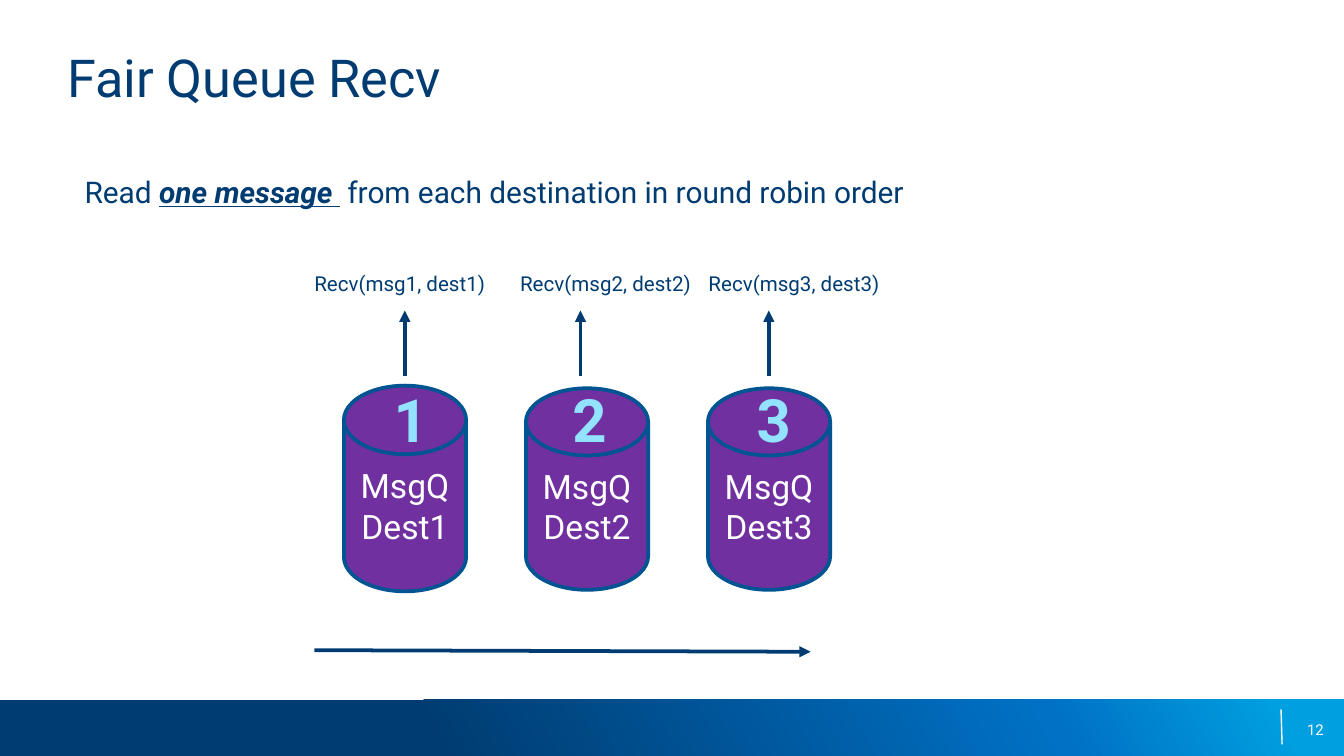
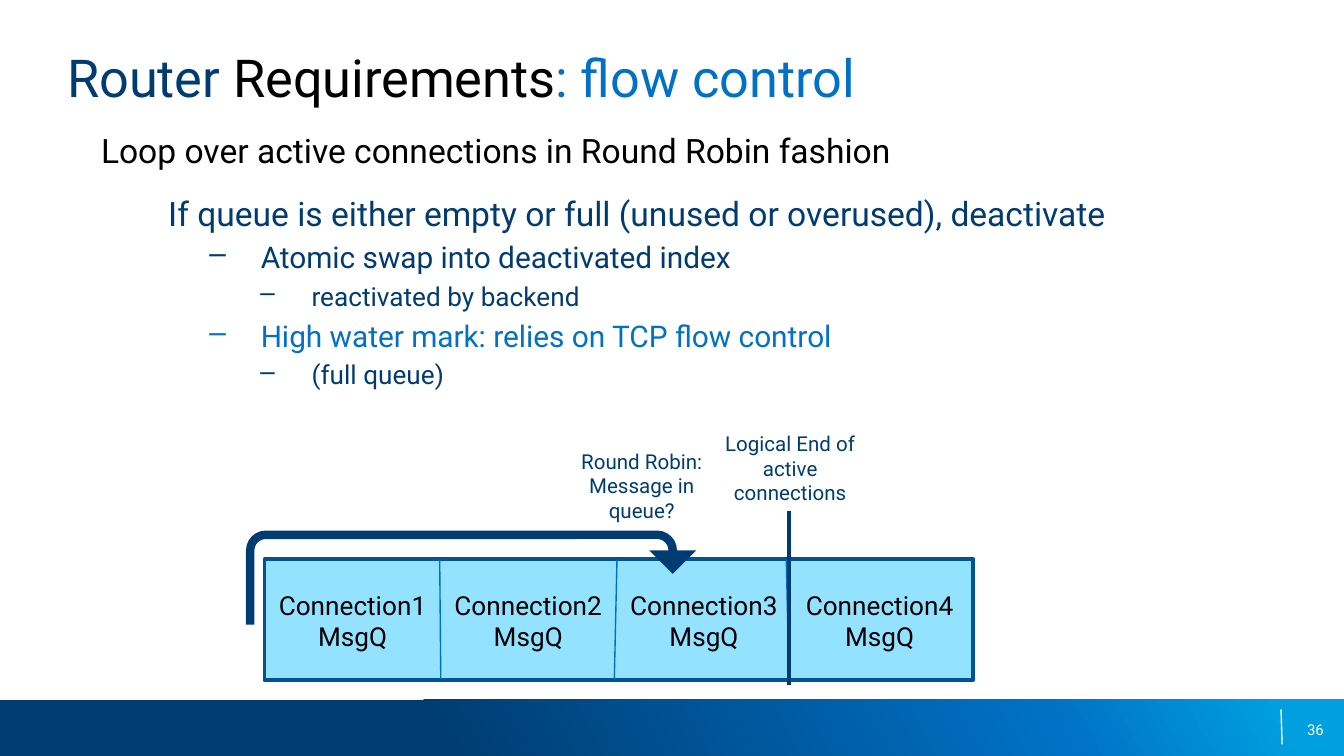
from copy import deepcopy

from lxml import etree
from pptx import Presentation
from pptx.dml.color import RGBColor
from pptx.enum.shapes import MSO_CONNECTOR, MSO_SHAPE
from pptx.enum.text import MSO_ANCHOR, MSO_AUTO_SIZE, PP_ALIGN
from pptx.oxml.ns import qn
from pptx.util import Cm, Pt

STRAIGHT = MSO_CONNECTOR.STRAIGHT
RECT = MSO_SHAPE.RECTANGLE
DISK = MSO_SHAPE.FLOWCHART_MAGNETIC_DISK
PROCESS = MSO_SHAPE.FLOWCHART_PROCESS
UTURN = MSO_SHAPE.U_TURN_ARROW
LEFT, CENTER, RIGHT = PP_ALIGN.LEFT, PP_ALIGN.CENTER, PP_ALIGN.RIGHT
TOP, MIDDLE = MSO_ANCHOR.TOP, MSO_ANCHOR.MIDDLE
NO_FIT = MSO_AUTO_SIZE.NONE

FONT = "Roboto"
NAVY = RGBColor(0x00, 0x3C, 0x71)
BLUE = RGBColor(0x00, 0x71, 0xC5)
SKY = RGBColor(0x00, 0x9F, 0xDF)
CYAN = RGBColor(0x00, 0xAE, 0xEF)
PALE = RGBColor(0x93, 0xE2, 0xFF)
EDGE = RGBColor(0x00, 0x54, 0x92)
DIVIDER = RGBColor(0x00, 0x6F, 0xC1)
PURPLE = RGBColor(0x70, 0x30, 0xA0)
BLACK = RGBColor(0x00, 0x00, 0x00)
WHITE = RGBColor(0xFF, 0xFF, 0xFF)


def write(target, text, at=None, size=11, color=NAVY, align=LEFT, anchor=TOP,
          padded=False, join=False, bold=False, italic=False, underline=False):
    if at:
        target = target.shapes.add_textbox(*[Cm(v) for v in at])
        tf = target.text_frame
        tf.word_wrap = True
        tf.vertical_anchor = anchor
        if not padded:
            tf.margin_left = tf.margin_top = tf.margin_right = tf.margin_bottom = 0
    tf = target.text_frame
    for line in text.split("\n"):
        p = tf.paragraphs[-1]
        if p.runs and not join:
            p = tf.add_paragraph()
        p.alignment = align
        r = p.add_run()
        r.text = line
        r.font.name = FONT
        r.font.size = Pt(size)
        r.font.color.rgb = color
        r.font.bold, r.font.italic, r.font.underline = bold, italic, underline
    return target


def draw_line(s, x1, y1, x2, y2, color=NAVY, width=2, arrow=False):
    c = s.shapes.add_connector(STRAIGHT, Cm(x1), Cm(y1), Cm(x2), Cm(y2))
    c.line.color.rgb = color
    c.line.width = Pt(width)
    if arrow:
        etree.SubElement(c.line._get_or_add_ln(), qn("a:tailEnd"), type="triangle")
    etree.SubElement(c.element.spPr, qn("a:effectLst"))
    return c


prs = Presentation()
prs.slide_width, prs.slide_height = Cm(25.4), Cm(14.29)
layout = prs.slide_layouts[5]

slides = []
for number, title_runs in [
    ("12", [("Fair Queue Recv", NAVY)]),
    ("36", [("Router ", NAVY), ("Requirements", BLACK), (": flow control", BLUE)]),
]:
    s = prs.slides.add_slide(layout)
    title = s.shapes.title
    title.left, title.top, title.width, title.height = Cm(1.27), Cm(0.86), Cm(22.86), Cm(2.41)
    tf = title.text_frame
    tf.auto_size = NO_FIT
    tf.vertical_anchor = TOP
    tf.margin_left = tf.margin_top = tf.margin_right = tf.margin_bottom = 0
    for text, color in title_runs:
        write(title, text, size=28, color=color, join=True)
    write(s, number, (19.1, 13.41, 5.92, 0.76), size=8, color=WHITE, align=RIGHT, anchor=MIDDLE)
    slides.append(s)

queue, router = slides

band = queue.shapes.add_shape(RECT, 0, Cm(13.23), Cm(25.4), Cm(1.07))
band.shadow.inherit = False
band.line.fill.background()
band.fill.gradient()
band.fill.gradient_angle = 29
stops = band.element.spPr.find(".//" + qn("a:gsLst"))
stops.append(deepcopy(stops[-1]))
for stop, (position, color) in zip(band.fill.gradient_stops, [(0.32, NAVY), (0.78, BLUE), (0.95, SKY)]):
    stop.position = position
    stop.color.rgb = color
rule = draw_line(queue, 24.21, 13.41, 24.23, 14.07, WHITE, 0.75)
for sp in (band, rule):
    layout.shapes.element.append(sp.element)

s = queue
intro = write(s, "Read ", (1.6, 3.28, 17.02, 0.69), size=16)
write(intro, "one message ", size=16, join=True, bold=True, italic=True, underline=True)
write(intro, " from each destination in round robin order", size=16, join=True)

for i, (top, height, digit_x, arrow_x, label_x) in enumerate([
    (7.29, 3.89, 7.19, 7.65, 5.94),
    (7.34, 3.81, 10.57, 10.97, 9.83),
    (7.34, 3.81, 14.05, 14.53, 13.39),
]):
    n = i + 1
    disk = s.shapes.add_shape(DISK, Cm(6.5 + 3.44 * i), Cm(top), Cm(2.31), Cm(height))
    disk.shadow.inherit = False
    disk.fill.solid()
    disk.fill.fore_color.rgb = PURPLE
    disk.line.color.rgb = EDGE
    disk.line.width = Pt(2)
    disk.text_frame.vertical_anchor = MIDDLE
    write(disk, f"MsgQ\nDest{n}", size=18, color=WHITE, align=CENTER)
    digit = write(s, str(n), (digit_x, 7.11, 0.97, 1.63), size=32, color=PALE,
                  align=CENTER, padded=True, bold=True)
    ln = etree.Element(qn("a:ln"), w=str(Pt(1.75)))
    fill = etree.SubElement(ln, qn("a:solidFill"))
    etree.SubElement(fill, qn("a:srgbClr"), val=str(CYAN))
    digit.element.find(".//" + qn("a:rPr")).insert(0, ln)
    draw_line(s, arrow_x, 7.11, arrow_x, 5.87, arrow=True)
    write(s, f"Recv(msg{n}, dest{n})", (label_x, 5.13, 3.56, 0.48))

draw_line(s, 5.94, 12.29, 15.32, 12.32, arrow=True)

s = router
body = s.shapes.add_textbox(Cm(1.27), Cm(2.46), Cm(22.86), Cm(5.59))
tf = body.text_frame
tf.word_wrap = True
tf.margin_left = tf.margin_top = tf.margin_right = tf.margin_bottom = 0
for text, size, color, margin, before, bullet in [
    ("Loop over active connections in Round Robin fashion", 18, BLACK, 0.64, 0, False),
    ("If queue is either empty or full (unused or overused), deactivate", 18, NAVY, 1.91, 12, False),
    ("Atomic swap into deactivated index", 16, NAVY, 3.66, 3.2, True),
    ("reactivated by backend", 14, NAVY, 4.62, 2.8, True),
    ("High water mark: relies on TCP flow control", 16, BLUE, 3.66, 3.2, True),
    ("(full queue)", 14, NAVY, 4.62, 2.8, True),
]:
    write(body, text, size=size, color=color)
    p = tf.paragraphs[-1]
    p.space_before = Pt(before)
    pPr = p._p.get_or_add_pPr()
    pPr.set("marL", str(Cm(margin)))
    pPr.set("indent", str(Cm(-0.97) if bullet else 0))
    if bullet:
        etree.SubElement(pPr, qn("a:buChar"), char="–")

row = s.shapes.add_shape(PROCESS, Cm(5), Cm(10.57), Cm(13.39), Cm(2.29))
row.shadow.inherit = False
row.fill.solid()
row.fill.fore_color.rgb = PALE
row.line.color.rgb = EDGE
row.line.width = Pt(2)

for x1, x2 in [(8.31, 8.33), (11.66, 11.61), (14.86, 14.91)]:
    draw_line(s, x1, 10.59, x2, 12.83, DIVIDER, 0.75)
for i in range(4):
    write(s, f"Connection{i + 1}\nMsgQ", (4.9 + 3.32 * i, 11.01, 3.53, 1.45), size=14,
          color=BLACK, align=CENTER, padded=True)

draw_line(s, 14.91, 9.65, 14.91, 12.95)
write(s, "Logical End of active connections", (13.64, 8.15, 2.59, 1.42), align=CENTER)

uturn = s.shapes.add_shape(UTURN, Cm(4.65), Cm(10.03), Cm(8.51), Cm(1.78))
uturn.shadow.inherit = False
uturn.fill.solid()
uturn.fill.fore_color.rgb = NAVY
uturn.line.fill.background()
for i, value in enumerate([0.09, 0.25, 0.25, 0.44, 0.46]):
    uturn.adjustments[i] = value
write(s, "Round Robin:\nMessage in queue?", (10.9, 8.48, 2.46, 1.42), align=CENTER)

prs.save("out.pptx")
